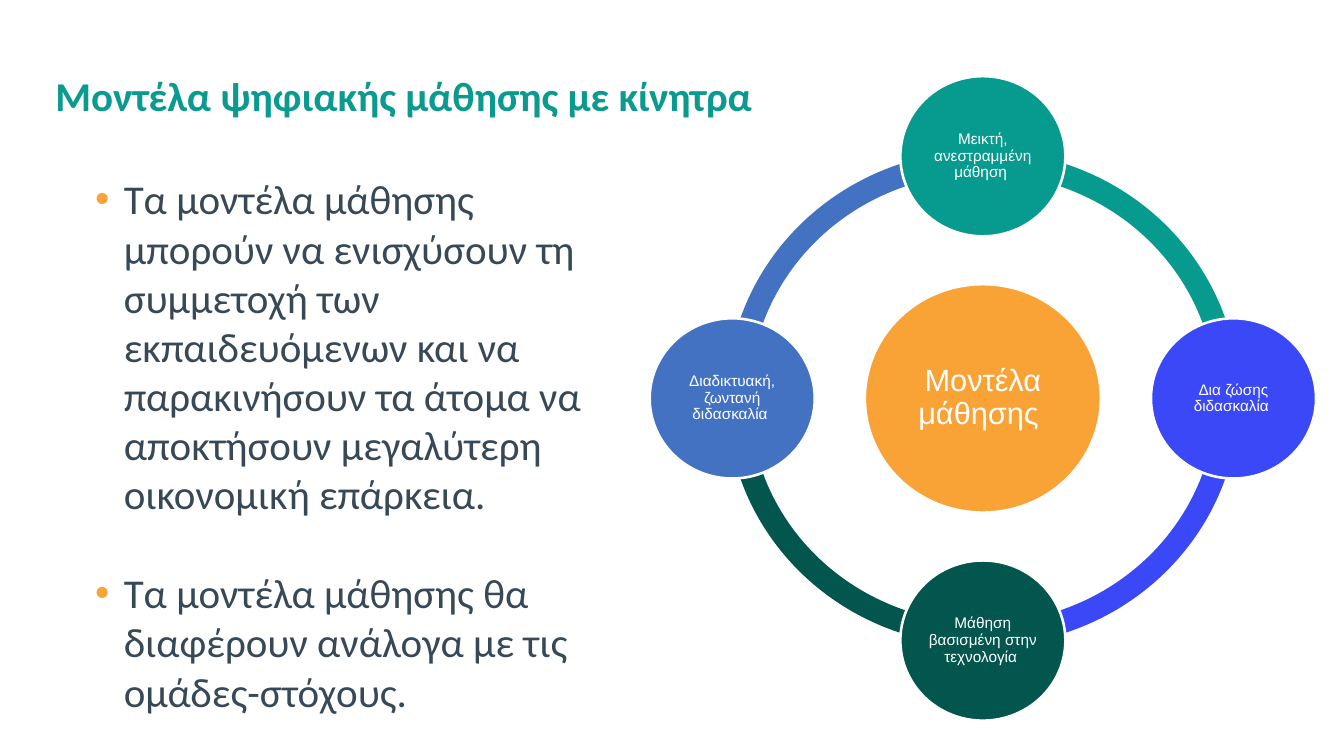
from math import cos, radians, sin

from lxml import etree
from pptx import Presentation, util as u
from pptx.dml.color import RGBColor
from pptx.enum import shapes, text
from pptx.oxml.ns import qn

# Slide size and a grid of 100 columns by 100 rows
WIDTH, HEIGHT = u.Pt(1050), u.Pt(591)
COLUMN, ROW = WIDTH / 100, HEIGHT / 100

# Colours
TITLE_TEAL = RGBColor(0x0A, 0x9A, 0x8F)
SLATE = RGBColor(0x37, 0x48, 0x56)
BULLET_ORANGE = RGBColor(0xFA, 0xA3, 0x37)
HUB_ORANGE = RGBColor(0xF9, 0xA3, 0x37)
TEAL = RGBColor(0x07, 0x9A, 0x8F)
INDIGO = RGBColor(0x3A, 0x48, 0xF8)
DARK_GREEN = RGBColor(0x03, 0x56, 0x4E)
BLUE = RGBColor(0x43, 0x72, 0xC3)
WHITE = RGBColor(0xFF, 0xFF, 0xFF)

# Wording
TITLE = "Μοντέλα ψηφιακής μάθησης με κίνητρα"
POINTS = [
    "Τα μοντέλα μάθησης μπορούν να ενισχύσουν τη συμμετοχή των "
    "εκπαιδευόμενων και να παρακινήσουν τα άτομα να αποκτήσουν "
    "μεγαλύτερη οικονομική επάρκεια.",
    "Τα μοντέλα μάθησης θα διαφέρουν ανάλογα με τις ομάδες-στόχους.",
]
HUB = "Μοντέλα μάθησης "
MODELS = [  # clockwise from the top
    ("Μεικτή, ανεστραμμένη μάθηση ", TEAL),
    ("Δια ζώσης διδασκαλία ", INDIGO),
    ("Μάθηση βασισμένη στην τεχνολογία ", DARK_GREEN),
    ("Διαδικτυακή, ζωντανή διδασκαλία ", BLUE),
]

# Cycle measures in columns and rows
CENTRE = (73.13, 52.7)
RING_SIZE = (38.13, 65.53)
RING_THICKNESS = 0.0464
HUB_SIZE = (17.56, 30.21)
MODEL_SIZE = (12.28, 21.19)
ORBIT = (18.65, 32.03)
FULL_TURN = 216  # blockArc angle units in a full circle


def place(part, left, top, width, height):
    part.left, part.width = int(left * COLUMN), int(width * COLUMN)
    part.top, part.height = int(top * ROW), int(height * ROW)


def format_runs(paragraph, font_name, size, colour, bold=False):
    for run in paragraph.runs:
        run.font.name, run.font.size, run.font.bold = font_name, u.Pt(size), bold
        run.font.color.rgb = colour


def set_insets(frame, side, top):
    frame.margin_left = frame.margin_right = u.Inches(side)
    frame.margin_top = frame.margin_bottom = u.Inches(top)


def add_bullet(paragraph, colour, indent):
    properties = paragraph._p.get_or_add_pPr()
    properties.set("marL", str(indent))
    properties.set("indent", str(-indent))
    bullet_colour = etree.SubElement(properties, qn("a:buClr"))
    etree.SubElement(bullet_colour, qn("a:srgbClr")).set("val", str(colour))
    etree.SubElement(properties, qn("a:buFont")).set("typeface", "Arial")
    etree.SubElement(properties, qn("a:buChar")).set("char", "•")


def fill_title(title):
    place(title, 3.77, 8.24, 92.46, 9.62)
    frame = title.text_frame
    frame.text = TITLE
    frame.auto_size = text.MSO_AUTO_SIZE.NONE
    frame.vertical_anchor = text.MSO_ANCHOR.MIDDLE
    set_insets(frame, 0.05, 0.05)
    heading = frame.paragraphs[0]
    heading.alignment = text.PP_ALIGN.LEFT
    heading.line_spacing = 0.9
    format_runs(heading, "Calibri", 32, TITLE_TEAL, bold=True)


def fill_points(body):
    place(body, 6.4, 22.41, 41.02, 81.97)
    frame = body.text_frame
    frame.text = "\n".join(POINTS)
    frame.auto_size = text.MSO_AUTO_SIZE.NONE
    frame.vertical_anchor = text.MSO_ANCHOR.TOP
    set_insets(frame, 0.1, 0.05)
    for index, point in enumerate(frame.paragraphs):
        point.alignment = text.PP_ALIGN.LEFT
        point.line_spacing = 1.0
        point.space_before = u.Pt(39 if index else 0)
        point.space_after = u.Pt(0)
        add_bullet(point, BULLET_ORANGE, u.Inches(0.31))
        format_runs(point, "Calibri", 32, SLATE)


def add_centred(cycle, preset, centre, size, colour):
    part = cycle.shapes.add_shape(preset, 0, 0, 0, 0)
    place(part, centre[0] - size[0] / 2, centre[1] - size[1] / 2, *size)
    part.shadow.inherit = False
    part.fill.solid()
    part.fill.fore_color.rgb = colour
    return part


def add_arc(cycle, start, end, colour):
    arc = add_centred(cycle, shapes.MSO_SHAPE.BLOCK_ARC, CENTRE, RING_SIZE, colour)
    arc.line.fill.background()
    for index, value in enumerate((start, end, RING_THICKNESS)):
        arc.adjustments[index] = value


def add_disc(cycle, centre, size, colour, label, font_size):
    disc = add_centred(cycle, shapes.MSO_SHAPE.OVAL, centre, size, colour)
    disc.line.color.rgb = WHITE
    disc.line.width = u.Pt(2)
    frame = disc.text_frame
    frame.text = label
    frame.word_wrap = True
    frame.vertical_anchor = text.MSO_ANCHOR.MIDDLE
    set_insets(frame, 0.02, 0.02)
    caption = frame.paragraphs[0]
    caption.alignment = text.PP_ALIGN.CENTER
    caption.line_spacing = 0.9
    format_runs(caption, "Arial", font_size, WHITE)


def add_cycle(slide):
    cycle = slide.shapes.add_group_shape()
    quarter = FULL_TURN // len(MODELS)
    # Ring: each arc runs clockwise from its own model
    for index, (_, colour) in enumerate(MODELS):
        start = (FULL_TURN - quarter + index * quarter) % FULL_TURN
        add_arc(cycle, start, (start + quarter) % FULL_TURN, colour)
    # Hub and the models around it
    add_disc(cycle, CENTRE, HUB_SIZE, HUB_ORANGE, HUB, 24)
    for index, (label, colour) in enumerate(MODELS):
        angle = radians(index * 360 / len(MODELS) - 90)
        centre = (CENTRE[0] + ORBIT[0] * cos(angle),
                  CENTRE[1] + ORBIT[1] * sin(angle))
        add_disc(cycle, centre, MODEL_SIZE, colour, label, 12)


def main():
    deck = Presentation()
    deck.slide_width, deck.slide_height = WIDTH, HEIGHT
    slide = deck.slides.add_slide(deck.slide_layouts[1])
    fill_title(slide.shapes.title)
    fill_points(slide.placeholders[1])
    add_cycle(slide)
    deck.save("out.pptx")


if __name__ == "__main__":
    main()
